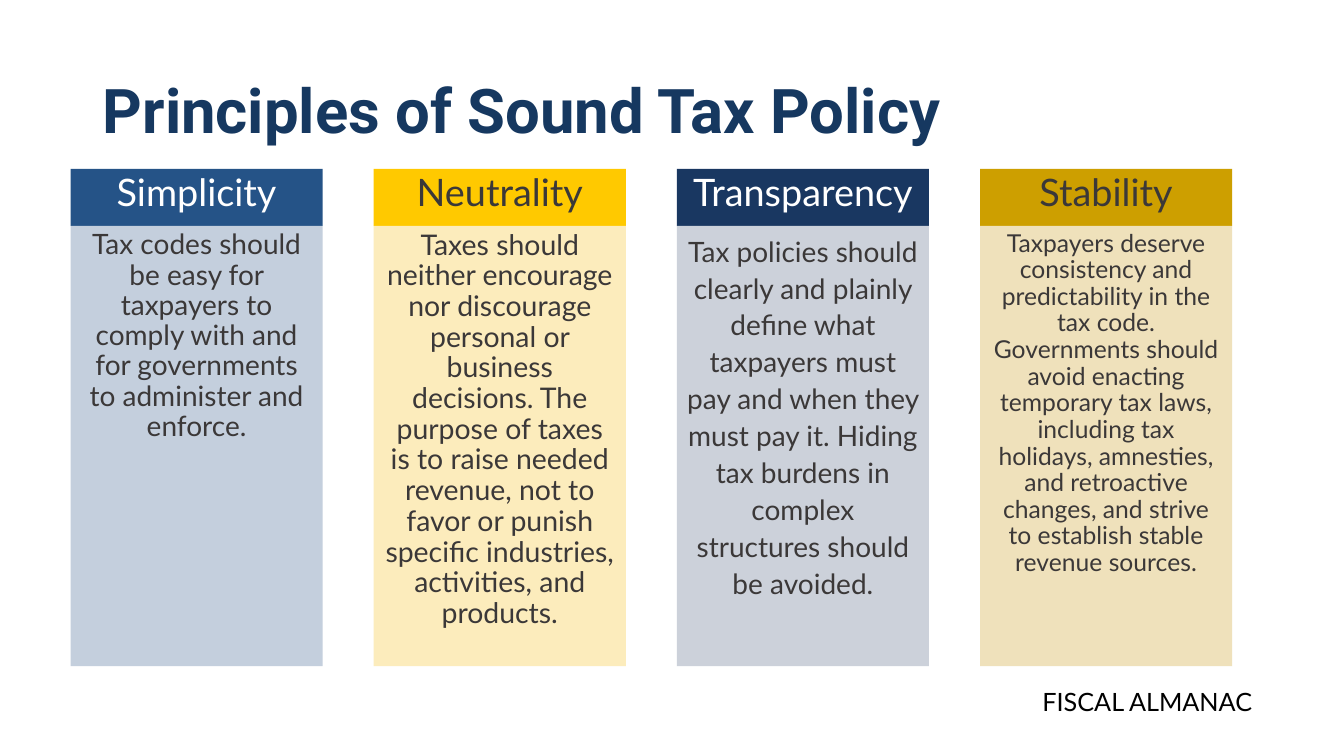
import pptx
import pptx.util
import pptx.dml.color
import pptx.enum.shapes
import pptx.enum.text

TITLE = "Principles of Sound Tax Policy"
FOOTER = "FISCAL ALMANAC"
HUES = {
    "navy": "163860", "ink": "3B3838", "white": "FFFFFF", "black": "000000",
    "blue": "255387", "mist": "C4CFDD",
    "gold": "FFC900", "cream": "FCECBC",
    "deep": "193761", "grey": "CCD1DA",
    "ochre": "CD9F00", "sand": "EFE1BB",
}
CARDS = [
    ("Simplicity", "blue", "white", "mist", 20, 0.9,
     "Tax codes should be easy for taxpayers to comply with and for "
     "governments to administer and enforce."),
    ("Neutrality", "gold", "ink", "cream", 20.3, 0.9,
     "Taxes should neither encourage nor discourage personal or business "
     "decisions. The purpose of taxes is to raise needed revenue, not to "
     "favor or punish specific industries, activities, and products."),
    ("Transparency", "deep", "white", "grey", 20, 1.1,
     "Tax policies should clearly and plainly define what taxpayers must "
     "pay and when they must pay it. Hiding tax burdens in complex "
     "structures should be avoided."),
    ("Stability", "ochre", "ink", "sand", 17.6, 0.9,
     "Taxpayers deserve consistency and predictability in the tax code. "
     "Governments should avoid enacting temporary tax laws, including tax "
     "holidays, amnesties, and retroactive changes, and strive to establish "
     "stable revenue sources."),
]
WIDE, HIGH = 13.33, 7.5
LEFT, STEP, CARD = 0.7, 3.007, 2.5
TOP, SPLIT, END = 1.675, 2.24, 6.61

Inch = pptx.util.Inches
Align = pptx.enum.text.PP_ALIGN
Anchor = pptx.enum.text.MSO_ANCHOR


def color(name):
    return pptx.dml.color.RGBColor.from_string(HUES[name])


def write(text, shape, size, hue, font="Lato", bold=False, align=Align.CENTER,
          anchor=Anchor.TOP, line=0.9, side=0.1):
    frame = shape.text_frame
    frame.word_wrap = True
    frame.auto_size = pptx.enum.text.MSO_AUTO_SIZE.NONE
    frame.vertical_anchor = anchor
    frame.margin_left = frame.margin_right = Inch(side)
    frame.margin_top = frame.margin_bottom = Inch(0.05)
    frame.text = text
    para = frame.paragraphs[0]
    para.alignment = align
    para.line_spacing = line
    para.space_before = pptx.util.Pt(0)
    face = para.runs[0].font
    face.name, face.bold = font, bold
    face.size = pptx.util.Pt(size)
    face.color.rgb = color(hue)


def block(slide, left, top, end, fill):
    shape = slide.shapes.add_shape(
        pptx.enum.shapes.MSO_SHAPE.RECTANGLE,
        Inch(left), Inch(top), Inch(CARD), Inch(end - top))
    shape.shadow.inherit = False
    shape.fill.solid()
    shape.fill.fore_color.rgb = color(fill)
    shape.line.fill.background()
    return shape


def main():
    deck = pptx.Presentation()
    deck.slide_width, deck.slide_height = Inch(WIDE), Inch(HIGH)
    slide = deck.slides.add_slide(deck.slide_layouts[5])

    foot = slide.shapes.add_textbox(Inch(9.57), Inch(6.76), Inch(2.85), Inch(0.4))
    write(FOOTER, foot, 18, "black", align=Align.RIGHT, line=1.0, side=0)

    title = slide.shapes.title
    title.left, title.top = Inch(0.92), Inch(0.4)
    title.width, title.height = Inch(11.5), Inch(1.45)
    write(TITLE, title, 44, "navy", font="Roboto", bold=True,
          align=Align.LEFT, anchor=Anchor.MIDDLE)

    for col, (name, fill, hue, tint, size, line, text) in enumerate(CARDS):
        left = LEFT + col * STEP
        write(name, block(slide, left, TOP, SPLIT, fill), 27, hue)
        write(text, block(slide, left, SPLIT, END, tint), size, "ink", line=line)

    deck.save("out.pptx")


if __name__ == "__main__":
    main()
